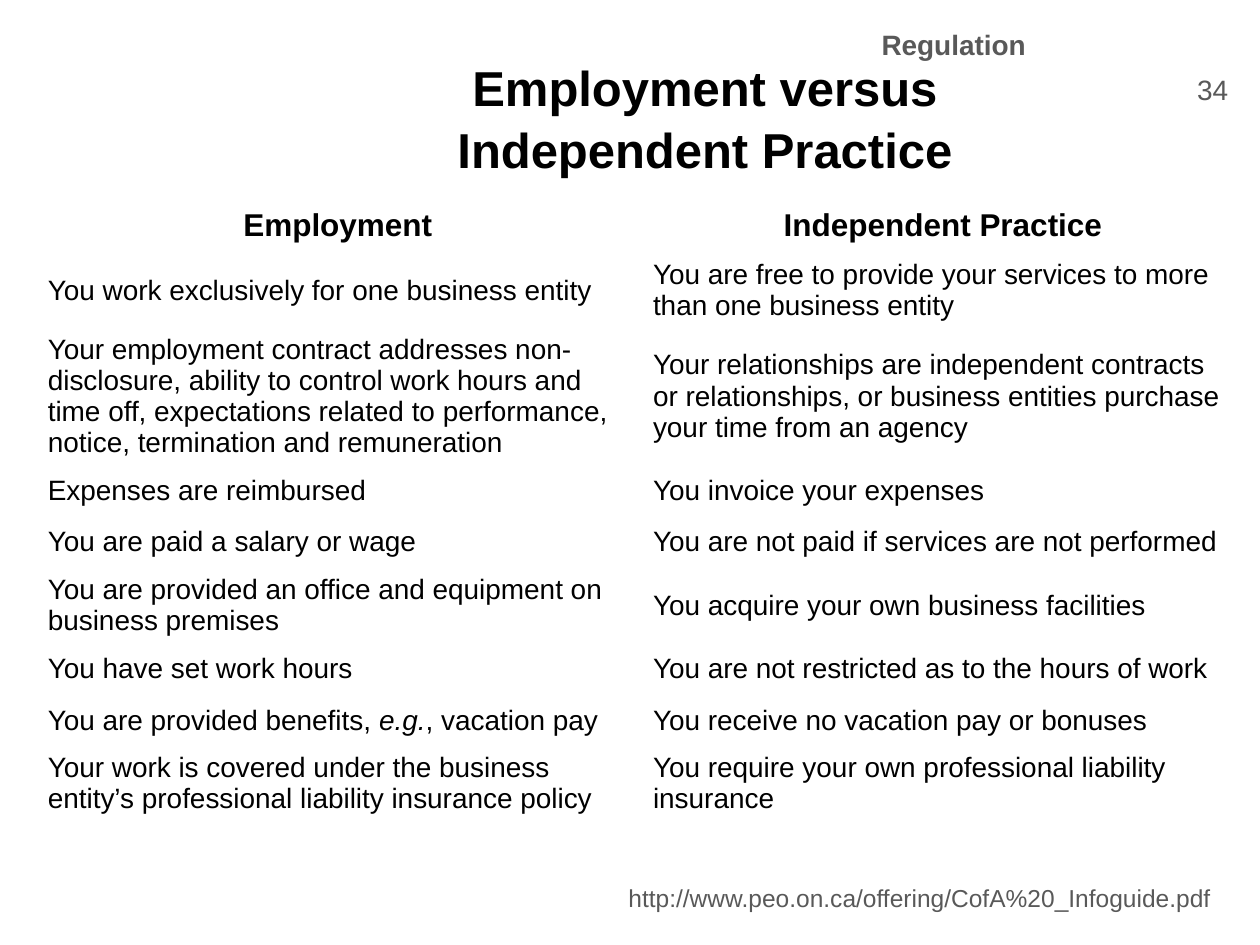
from dataclasses import dataclass

import pptx
import pptx.dml.color
import pptx.enum.text
import pptx.util

Cm = pptx.util.Cm
Pt = pptx.util.Pt
ALIGN = pptx.enum.text.PP_ALIGN
ANCHOR = pptx.enum.text.MSO_ANCHOR

COLORS = {"text": "000000", "muted": "595959"}
FONT = "Arial"
ROW_HEIGHT = Cm(1.04)
COLUMN_WIDTH = Cm(12.2)


@dataclass
class Label:
    text: str
    left: float
    top: float
    width: float
    height: float
    size: int
    align: ALIGN = ALIGN.RIGHT
    anchor: ANCHOR = ANCHOR.TOP
    bold: bool = False


@dataclass
class Comparison:
    employment: str
    independent: str


LABELS = [
    Label("34", 22.83, 1.24, 2.18, 1.02, 16, anchor=ANCHOR.BOTTOM),
    Label("Regulation", 9.07, 0.43, 11.86, 0.71, 16, bold=True),
    Label("http://www.peo.on.ca/offering/CofA%20_Infoguide.pdf",
          12.42, 17.68, 12.7, 0.86, 14, align=ALIGN.LEFT),
]

# Asterisks mark italic words.
COMPARISONS = [
    Comparison("Employment", "Independent Practice"),
    Comparison("You work exclusively for one business entity",
               "You are free to provide your services to more than one business entity"),
    Comparison("Your employment contract addresses non-disclosure, ability to control "
               "work hours and time off, expectations related to performance, notice, "
               "termination and remuneration",
               "Your relationships are independent contracts or relationships, or "
               "business entities purchase your time from an agency"),
    Comparison("Expenses are reimbursed", "You invoice your expenses"),
    Comparison("You are paid a salary or wage",
               "You are not paid if services are not performed"),
    Comparison("You are provided an office and equipment on business premises",
               "You acquire your own business facilities"),
    Comparison("You have set work hours",
               "You are not restricted as to the hours of work"),
    Comparison("You are provided benefits, *e.g.*, vacation pay",
               "You receive no vacation pay or bonuses"),
    Comparison("Your work is covered under the business entity’s professional "
               "liability insurance policy",
               "You require your own professional liability insurance"),
]


def add_run(paragraph, text: str, size: int, color: str = "text",
            bold: bool = False, italic: bool = False) -> None:
    run = paragraph.add_run()
    run.text = text
    run.font.name = FONT
    run.font.size = Pt(size)
    run.font.bold = bold
    run.font.italic = italic
    run.font.color.rgb = pptx.dml.color.RGBColor.from_string(COLORS[color])


def write_title(slide) -> None:
    title = slide.shapes.title
    title.left, title.top, title.width, title.height = Cm(4.29), Cm(0.76), Cm(19.84), Cm(3.18)
    title.text_frame.vertical_anchor = ANCHOR.MIDDLE
    heading = title.text_frame.paragraphs[0]
    heading.alignment = ALIGN.CENTER
    heading.line_spacing = 1.05
    add_run(heading, "Employment versus", 28, bold=True)
    heading.add_line_break()
    add_run(heading, "Independent Practice", 28, bold=True)


def add_label(slide, label: Label) -> None:
    box = slide.shapes.add_textbox(Cm(label.left), Cm(label.top), Cm(label.width), Cm(label.height))
    frame = box.text_frame
    frame.word_wrap = True
    frame.vertical_anchor = label.anchor
    paragraph = frame.paragraphs[0]
    paragraph.alignment = label.align
    add_run(paragraph, label.text, label.size, "muted", label.bold)


def fill_cell(cell, text: str, is_header: bool) -> None:
    cell.fill.background()
    cell.vertical_anchor = ANCHOR.TOP if is_header else ANCHOR.MIDDLE
    paragraph = cell.text_frame.paragraphs[0]
    paragraph.alignment = ALIGN.CENTER if is_header else ALIGN.LEFT
    for index, part in enumerate(text.split("*")):
        add_run(paragraph, part, 18 if is_header else 16, bold=is_header, italic=index % 2 == 1)


def add_comparison_table(slide, comparisons: list[Comparison]) -> None:
    table = slide.shapes.add_table(
        len(comparisons), 2, Cm(0.71), Cm(4.06),
        2 * COLUMN_WIDTH, len(comparisons) * ROW_HEIGHT).table
    table.horz_banding = False
    table.first_row = False
    for column in table.columns:
        column.width = COLUMN_WIDTH
    for index, comparison in enumerate(comparisons):
        table.rows[index].height = ROW_HEIGHT
        fill_cell(table.cell(index, 0), comparison.employment, index == 0)
        fill_cell(table.cell(index, 1), comparison.independent, index == 0)


def main() -> None:
    presentation = pptx.Presentation()
    presentation.slide_width = Cm(25.4)
    presentation.slide_height = Cm(19.05)
    slide = presentation.slides.add_slide(presentation.slide_layouts.get_by_name("Title Only"))
    write_title(slide)
    add_comparison_table(slide, COMPARISONS)
    for label in LABELS:
        add_label(slide, label)
    presentation.save("out.pptx")


if __name__ == "__main__":
    main()
